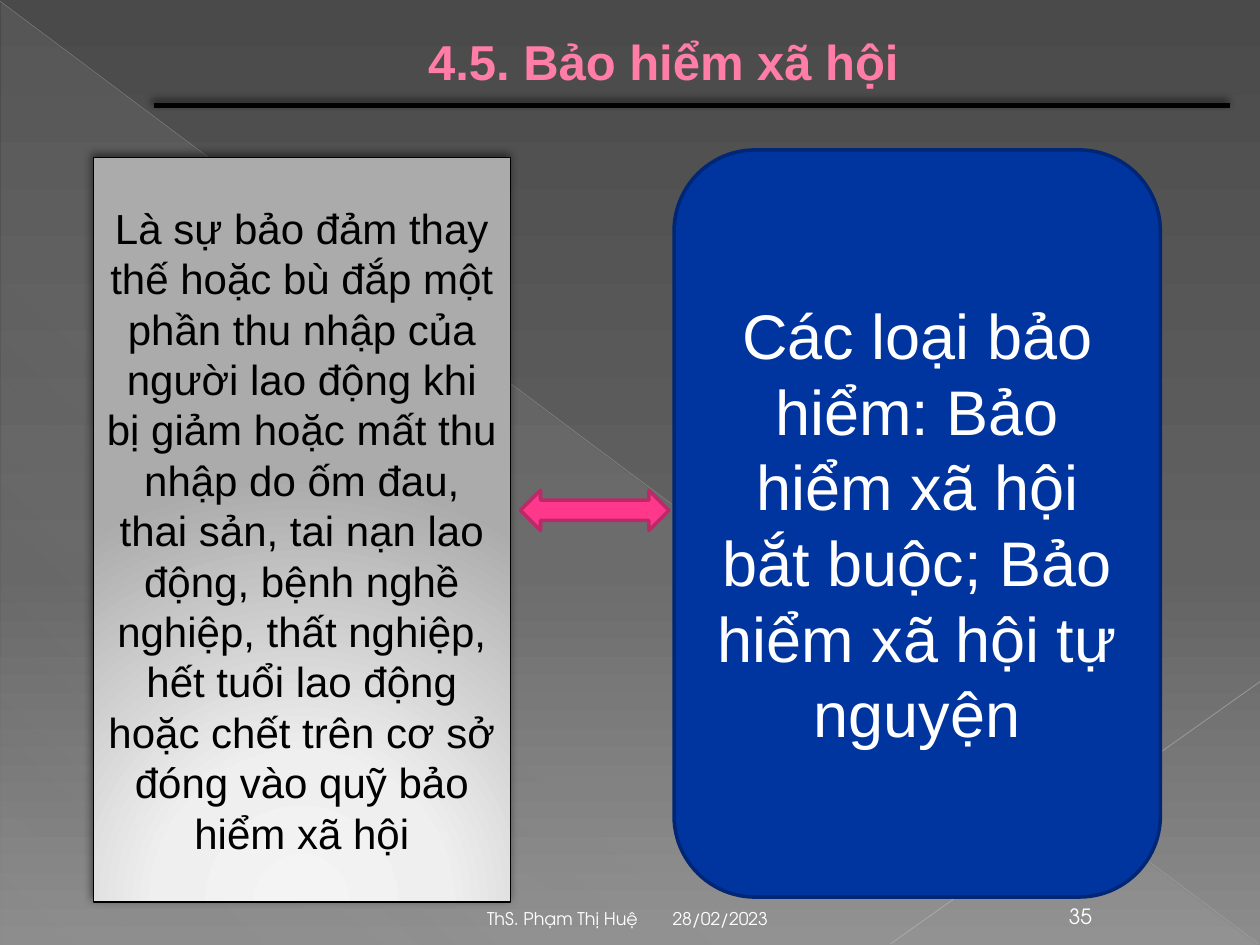
from dataclasses import dataclass

from lxml.etree import SubElement as add_node
from pptx import Presentation
from pptx.dml.color import RGBColor as Color
from pptx.enum.shapes import MSO_CONNECTOR as Connector, MSO_SHAPE as Shape
from pptx.enum.text import MSO_ANCHOR as Anchor, PP_ALIGN as Align
from pptx.oxml.ns import qn
from pptx.util import Inches, Pt


@dataclass(frozen=True)
class Theme:
    body_font: str = "Arial"
    footer_font: str = "TeX Gyre Adventor"
    black: str = "000000"
    white: str = "FFFFFF"
    title: str = "FF7DA7"
    title_outline: str = "B12761"
    blue: str = "00349E"
    blue_edge: str = "002675"
    pink: str = "FF388C"
    pink_edge: str = "BD2968"
    ray_down: str = "BFBFBF"
    ray_up: str = "C6C6C6"
    backdrop: tuple = ((0, "4A4A4A", 100), (60, "626262", 100), (100, "8C8C8C", 100))
    sheen: tuple = ((0, "D2D2D2", 10), (70, "D2D2D2", 8), (100, "D2D2D2", 1))
    panel: tuple = ((0, "F4F4F4", 100), (34, "EFEFEF", 100), (100, "ABABAB", 100))
    title_size: int = 28
    definition_size: int = 24
    types_size: int = 36
    footer_size: int = 10
    number_size: int = 12


class SlideBuilder:
    def __init__(self, slide, theme):
        self.slide = slide
        self.theme = theme

    def color_node(self, parent, color, opacity):
        node = add_node(parent, qn("a:srgbClr"), val=color)
        if opacity < 100:
            add_node(node, qn("a:alpha"), val=str(opacity * 1000))

    def gradient(self, fill, owner, stops, angle=None, focus=None):
        fill.gradient()
        node = owner.find(".//" + qn("a:gradFill"))
        for child in list(node):
            node.remove(child)
        stop_list = add_node(node, qn("a:gsLst"))
        for position, color, opacity in stops:
            stop = add_node(stop_list, qn("a:gs"), pos=str(position * 1000))
            self.color_node(stop, color, opacity)
        if focus:
            radial = add_node(node, qn("a:path"), {"path": "circle"})
            edges = {side: str(value * 1000) for side, value in zip("ltrb", focus)}
            add_node(radial, qn("a:fillToRect"), edges)
        else:
            add_node(node, qn("a:lin"), ang=str(angle * 60000), scaled="0")

    def background(self, stops, angle):
        self.gradient(self.slide.background.fill, self.slide.element, stops, angle)

    def effects(self, properties, shadow):
        effects = properties.find(qn("a:effectLst"))
        if effects is None:
            effects = add_node(properties, qn("a:effectLst"))
        if shadow:
            opacity, blur, distance, direction = shadow
            node = add_node(effects, qn("a:outerShdw"), blurRad=str(Pt(blur)),
                            dist=str(Pt(distance)), dir=str(direction * 60000),
                            algn="tl", rotWithShape="0")
            self.color_node(node, self.theme.black, opacity)

    def shape(self, kind, place, fill=None, edge=None, width=0, stops=None,
              angle=None, focus=None, shadow=None):
        shape = self.slide.shapes.add_shape(kind, *map(Inches, place))
        shape.shadow.inherit = False
        if stops:
            self.gradient(shape.fill, shape.element, stops, angle, focus)
        else:
            shape.fill.solid()
            shape.fill.fore_color.rgb = Color.from_string(fill)
        if edge:
            shape.line.color.rgb = Color.from_string(edge)
            shape.line.width = Pt(width)
        else:
            shape.line.fill.background()
        self.effects(shape.element.spPr, shadow)
        return shape

    def line(self, start, end, color, width, opacity=100, shadow=None):
        line = self.slide.shapes.add_connector(
            Connector.STRAIGHT, *map(Inches, start + end))
        line.line.color.rgb = Color.from_string(color)
        line.line.width = Pt(width)
        if opacity < 100:
            node = line.element.spPr.find(".//" + qn("a:srgbClr"))
            add_node(node, qn("a:alpha"), val=str(opacity * 1000))
        self.effects(line.element.spPr, shadow)

    def add_text(self, box, text, size, color, font=None, align=Align.CENTER,
                 anchor=Anchor.MIDDLE, bold=False):
        frame = box.text_frame
        frame.word_wrap = True
        frame.vertical_anchor = anchor
        para = frame.paragraphs[0]
        para.alignment = align
        span = para.add_run()
        span.text = text
        span.font.name = font or self.theme.body_font
        span.font.size = Pt(size)
        span.font.bold = bold
        span.font.color.rgb = Color.from_string(color)
        return para, span

    def text_box(self, place):
        return self.slide.shapes.add_textbox(*map(Inches, place))

    def title(self, text, place):
        theme = self.theme
        para, span = self.add_text(self.text_box(place), text, theme.title_size,
                                   theme.title, bold=True)
        para._p.get_or_add_pPr().set("marL", str(Inches(0.53)))
        properties = span._r.get_or_add_rPr()
        outline = add_node(properties, qn("a:ln"), w=str(Pt(0.5)))
        self.color_node(add_node(outline, qn("a:solidFill")), theme.title_outline, 100)
        properties.insert(0, outline)

    def footer(self, text, left, width, align, size):
        self.add_text(self.text_box((left, 7.09, width, 0.33)), text, size,
                      self.theme.white, self.theme.footer_font, align, Anchor.BOTTOM)


def main():
    theme = Theme()
    deck = Presentation()
    deck.slide_width, deck.slide_height = Inches(10), Inches(7.5)
    page = SlideBuilder(deck.slides.add_slide(deck.slide_layouts[6]), theme)

    page.background(theme.backdrop, 90)
    page.shape(Shape.RIGHT_TRIANGLE, (0.01, 0.02, 9.98, 7.48),
               stops=theme.sheen, angle=133)
    page.line((0, 0.01), (9.99, 7.49), theme.ray_down, 0.39, 35)
    page.line((10, 5.41), (7.07, 7.49), theme.ray_up, 0.47, 45)

    page.title("4.5. Bảo hiểm xã hội", (0, -0.03, 10, 1.03))
    page.footer("28/02/2023", 5.24, 2.33, Align.LEFT, theme.footer_size)
    page.footer("ThS. Phạm Thị Huệ", 0.5, 4.66, Align.RIGHT, theme.footer_size)
    page.footer("35", 8.3, 0.55, Align.CENTER, theme.number_size)
    page.line((1.22, 0.84), (9.76, 0.84), theme.black, 3, shadow=(60, 4, 3, 245))

    definition = page.shape(
        Shape.RECTANGLE, (0.74, 1.25, 3.31, 5.91), edge=theme.black, width=0.75,
        stops=theme.panel, focus=(50, 155, 50, -55), shadow=(50, 5, 2, 245))
    page.add_text(
        definition,
        "Là sự bảo đảm thay thế hoặc bù đắp một phần thu nhập của người lao động "
        "khi bị giảm hoặc mất thu nhập do ốm đau, thai sản, tai nạn lao động, "
        "bệnh nghề nghiệp, thất nghiệp, hết tuổi lao động hoặc chết trên cơ sở "
        "đóng vào quỹ bảo hiểm xã hội",
        theme.definition_size, theme.black)

    types = page.shape(Shape.ROUNDED_RECTANGLE, (5.35, 1.19, 3.86, 5.93),
                       theme.blue, theme.blue_edge, 2)
    page.add_text(
        types,
        "Các loại bảo hiểm: Bảo hiểm xã hội bắt buộc; Bảo hiểm xã hội tự nguyện",
        theme.types_size, theme.white)

    page.shape(Shape.LEFT_RIGHT_ARROW, (4.13, 3.89, 1.18, 0.32),
               theme.pink, theme.pink_edge, 2)

    deck.save("out.pptx")


if __name__ == "__main__":
    main()
